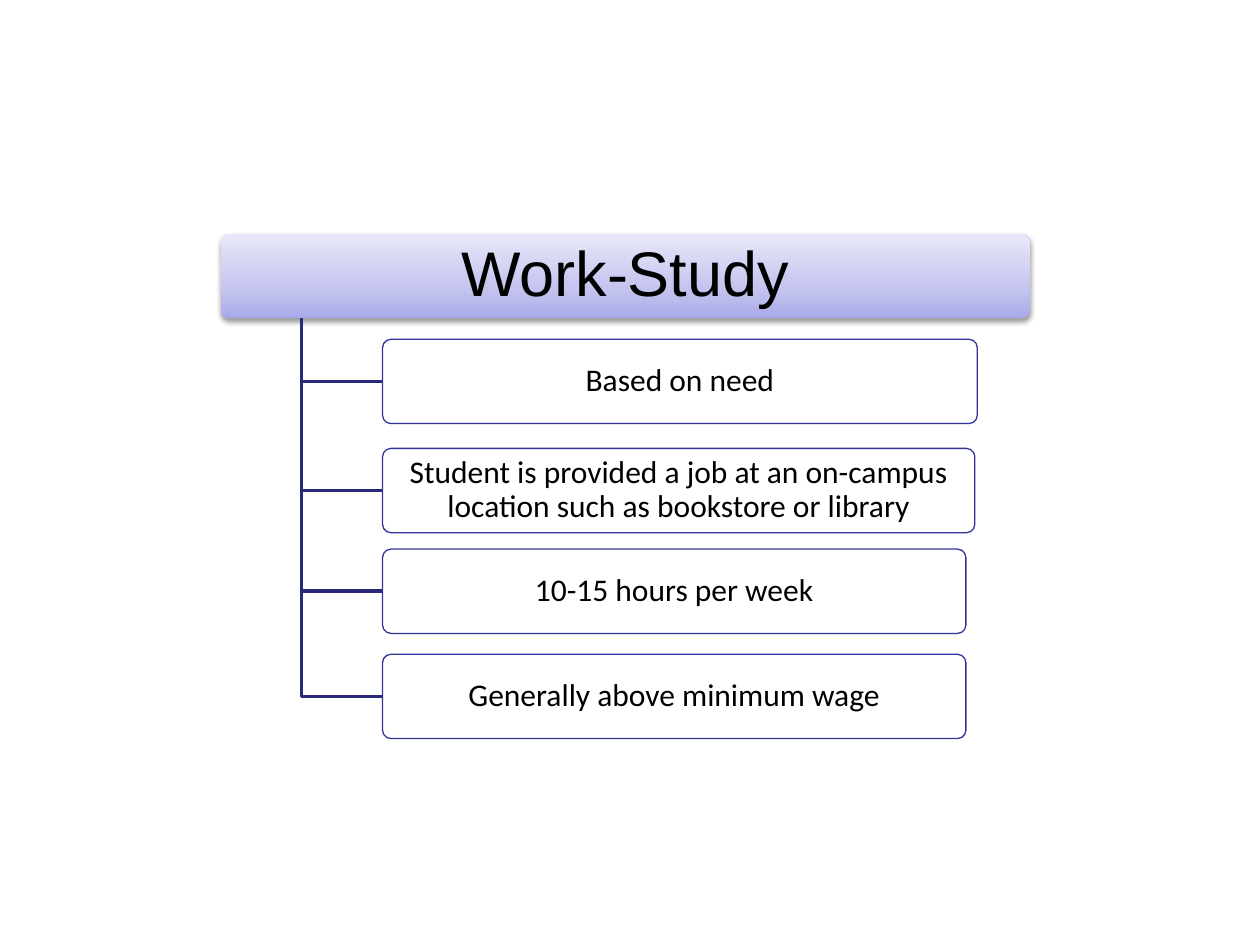
"""Build the Work-Study hierarchy slide."""
from copy import deepcopy

from lxml import etree
from pptx import Presentation
from pptx import util as u
from pptx.dml import color
from pptx.enum import shapes, text
from pptx.oxml import ns


def rgb(value):
    """Turn a hex string into a colour."""
    return color.RGBColor.from_string(value)


class Deck:
    """Hold the style and the current slide."""

    box_h = 1.7
    ink = "000000"
    border = "333399"
    branch_ink = "29297B"
    stops = ((0, "A9A9E9"), (0.35, "C4C4EF"), (1, "E8E8FA"))

    def __init__(self, prs):
        """Start a blank slide."""
        self.s = prs.slides.add_slide(prs.slide_layouts[6])

    def box(self, x, y, w, words, font, size, inset):
        """Add a rounded box with centred text."""
        sp = self.s.shapes.add_shape(
            shapes.MSO_SHAPE.ROUNDED_RECTANGLE,
            u.Cm(x), u.Cm(y), u.Cm(w), u.Cm(self.box_h))
        sp.adjustments[0] = 0.1
        sp.shadow.inherit = False
        tf = sp.text_frame
        tf.word_wrap = True
        tf.vertical_anchor = text.MSO_ANCHOR.MIDDLE
        tf.margin_left = tf.margin_right = u.Cm(inset)
        tf.margin_top = tf.margin_bottom = u.Cm(inset * 0.75)
        p = tf.paragraphs[0]
        p.alignment = text.PP_ALIGN.CENTER
        p.line_spacing = 0.9
        r = p.add_run()
        r.text = words
        r.font.name = font
        r.font.size = u.Pt(size)
        r.font.color.rgb = rgb(self.ink)
        return sp

    def header(self, x, y, w, words):
        """Add the gradient header with its soft shadow."""
        sp = self.box(x, y, w, words, "Arial", 36, 0.23)
        sp.line.fill.background()
        sp.fill.gradient()
        sp.fill.gradient_angle = 90
        stop_list = sp._element.spPr.find(".//" + ns.qn("a:gsLst"))
        stop_list.append(deepcopy(stop_list[0]))
        for stop, (position, value) in zip(sp.fill.gradient_stops, self.stops):
            stop.position = position
            stop.color.rgb = rgb(value)
        effects = sp._element.spPr.find(ns.qn("a:effectLst"))
        shadow = etree.SubElement(
            effects, ns.qn("a:outerShdw"), blurRad="40000", dist="20000",
            dir="5400000", rotWithShape="0")
        tint = etree.SubElement(shadow, ns.qn("a:srgbClr"), val=self.ink)
        etree.SubElement(tint, ns.qn("a:alpha"), val="38000")

    def item(self, x, y, w, words):
        """Add an outlined, slightly transparent detail box."""
        sp = self.box(x, y, w, words, "Calibri", 18, 0.15)
        sp.fill.solid()
        sp.fill.fore_color.rgb = rgb("FFFFFF")
        tint = sp._element.spPr.find(ns.qn("a:solidFill"))[0]
        etree.SubElement(tint, ns.qn("a:alpha"), val="90000")
        sp.line.color.rgb = rgb(self.border)
        sp.line.width = u.Pt(0.75)

    def branch(self, x, y, end_x, end_y):
        """Add an elbow running down and then right."""
        fb = self.s.shapes.build_freeform(u.Cm(x), u.Cm(y))
        fb.add_line_segments(
            [(u.Cm(x), u.Cm(end_y)), (u.Cm(end_x), u.Cm(end_y))], close=False)
        sp = fb.convert_to_shape()
        sp.shadow.inherit = False
        sp.fill.background()
        sp.line.color.rgb = rgb(self.branch_ink)
        sp.line.width = u.Pt(2)


def main():
    """Draw the header and its four details."""
    prs = Presentation()
    prs.slide_width, prs.slide_height = u.Cm(25.4), u.Cm(19.05)
    deck = Deck(prs)
    left, top, width = 4.45, 4.72, 16.31
    trunk_x, item_x = left + width * 0.1, left + width * 0.2
    items = (
        (6.84, 11.99, "Based on need"),
        (9.04, 11.94, "Student is provided a job at an on-campus "
                      "location such as bookstore or library"),
        (11.07, 11.76, "10-15 hours per week"),
        (13.19, 11.76, "Generally above minimum wage"),
    )
    deck.header(left, top, width, "Work-Study")
    for y, w, words in items:
        deck.branch(trunk_x, top + deck.box_h, item_x, y + deck.box_h / 2)
        deck.item(item_x, y, w, words)
    prs.save("out.pptx")


if __name__ == "__main__":
    main()
